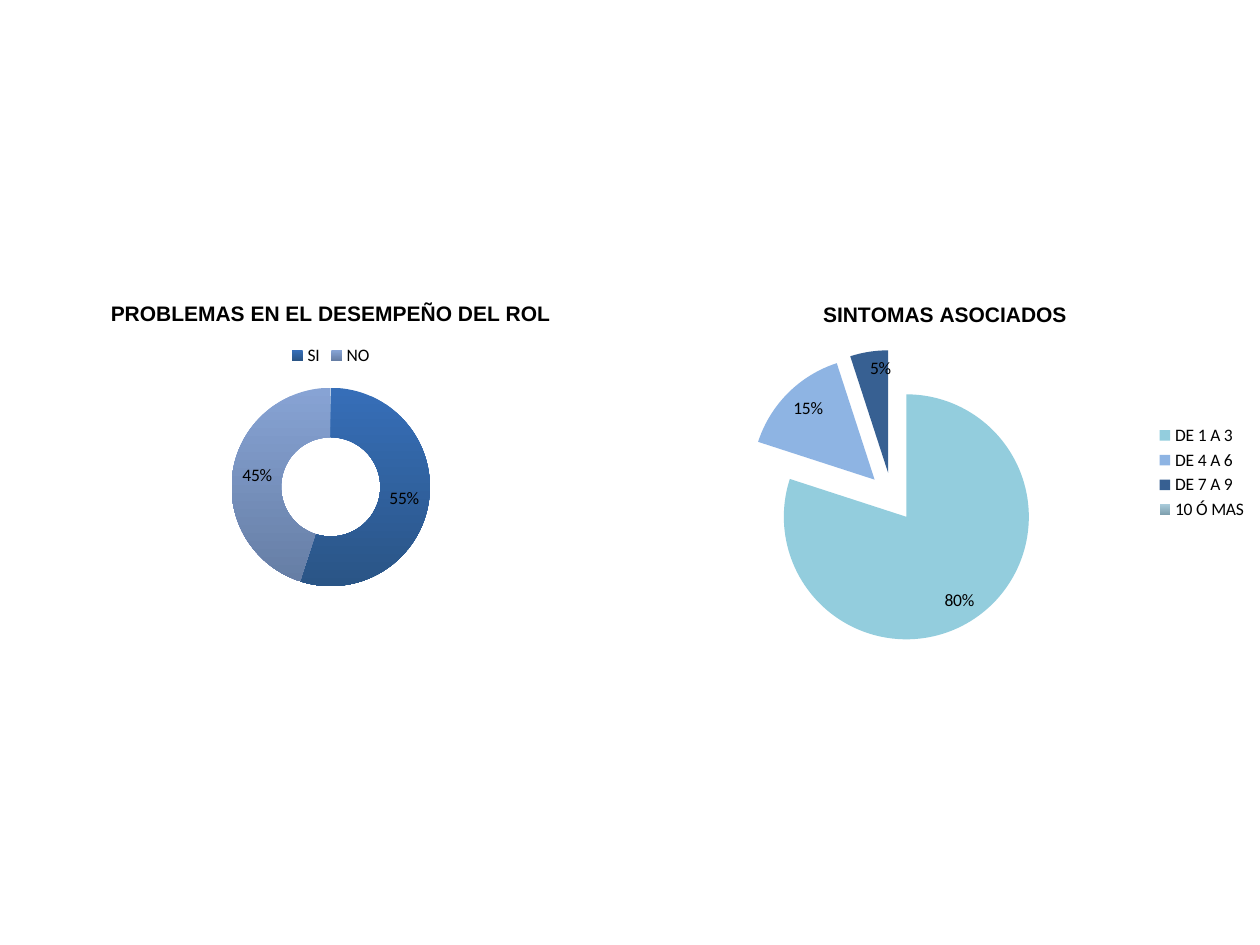
"""Build a slide with a doughnut chart and an exploded pie chart."""
from dataclasses import dataclass

from lxml.etree import Element
from pptx import Presentation
from pptx.chart.data import CategoryChartData
from pptx.dml.color import RGBColor
from pptx.dml.fill import FillFormat
from pptx.enum.chart import XL_CHART_TYPE, XL_LABEL_POSITION, XL_LEGEND_POSITION
from pptx.oxml.ns import qn
from pptx.slide import Slide
from pptx.text.text import Font
from pptx.util import Inches, Pt

BLACK = RGBColor(0x00, 0x00, 0x00)
ROYAL = RGBColor(0x36, 0x6E, 0xB8)
DEEP = RGBColor(0x2A, 0x55, 0x86)
SKY = RGBColor(0x87, 0xA3, 0xD4)
SLATE = RGBColor(0x66, 0x7E, 0xA5)
AQUA = RGBColor(0x93, 0xCD, 0xDD)
LIGHT = RGBColor(0x8E, 0xB4, 0xE3)
NAVY = RGBColor(0x37, 0x60, 0x92)
MIST = RGBColor(0xA9, 0xCB, 0xDA)
STEEL = RGBColor(0x7F, 0xA0, 0xAF)

BODY = {"name": "Calibri", "size": Pt(10), "bold": False}
HEAD = {"name": "Arial", "size": Pt(12), "bold": True}


@dataclass
class Wedge:
    name: str
    value: int
    tones: tuple[RGBColor, ...]


@dataclass
class Graph:
    title: str
    kind: XL_CHART_TYPE
    box: tuple[float, float, float, float]
    legend: XL_LEGEND_POSITION
    wedges: list[Wedge]
    burst: int = 0


GRAPHS = [
    Graph(
        "PROBLEMAS EN EL DESEMPEÑO DEL ROL",
        XL_CHART_TYPE.DOUGHNUT,
        (0.28, 2.25, 4.69, 2.54),
        XL_LEGEND_POSITION.TOP,
        [Wedge("SI", 55, (ROYAL, DEEP)), Wedge("NO", 45, (SKY, SLATE))],
    ),
    Graph(
        "SINTOMAS ASOCIADOS",
        XL_CHART_TYPE.PIE,
        (5, 2.25, 5, 3),
        XL_LEGEND_POSITION.RIGHT,
        [
            Wedge("DE 1 A 3", 80, (AQUA,)),
            Wedge("DE 4 A 6", 15, (LIGHT,)),
            Wedge("DE 7 A 9", 5, (NAVY,)),
            Wedge("10 Ó MAS", 0, (MIST, STEEL)),
        ],
        burst=20,
    ),
]


def style(font: Font, form: dict) -> None:
    for key, value in form.items():
        setattr(font, key, value)
    font.color.rgb = BLACK


def paint(fill: FillFormat, tones: tuple[RGBColor, ...]) -> None:
    if len(tones) == 1:
        fill.solid()
        fill.fore_color.rgb = tones[0]
        return
    fill.gradient()
    fill.gradient_angle = 270
    for stop, tone in zip(fill.gradient_stops, tones):
        stop.color.rgb = tone


def draw(slide: Slide, graph: Graph) -> None:
    data = CategoryChartData()
    data.categories = [wedge.name for wedge in graph.wedges]
    data.add_series("Series 1", [wedge.value for wedge in graph.wedges])
    box = [Inches(side) for side in graph.box]
    chart = slide.shapes.add_chart(graph.kind, *box, data).chart
    style(chart.font, BODY)

    frame = chart.chart_title.text_frame
    frame.text = graph.title
    style(frame.paragraphs[0].runs[0].font, HEAD)
    chart.has_legend = True
    chart.legend.position = graph.legend
    chart.legend.include_in_layout = False

    plot = chart.plots[0]
    plot.vary_by_categories = True
    series = plot.series[0]
    for index, wedge in enumerate(graph.wedges):
        paint(series.points[index].format.fill, wedge.tones)
    if graph.burst:
        burst = Element(qn("c:explosion"), val=str(graph.burst))
        series._element.find(qn("c:dPt")).addprevious(burst)

    labels = series.data_labels
    form = {
        "show_percentage": True,
        "show_value": False,
        "number_format": "0%;;",
        "number_format_is_linked": False,
    }
    for key, value in form.items():
        setattr(labels, key, value)
    if graph.kind == XL_CHART_TYPE.PIE:
        labels.position = XL_LABEL_POSITION.INSIDE_END


def main() -> None:
    deck = Presentation()
    deck.slide_width, deck.slide_height = Inches(10), Inches(7.5)
    slide = deck.slides.add_slide(deck.slide_layouts[6])
    for graph in GRAPHS:
        draw(slide, graph)
    deck.save("out.pptx")


if __name__ == "__main__":
    main()
